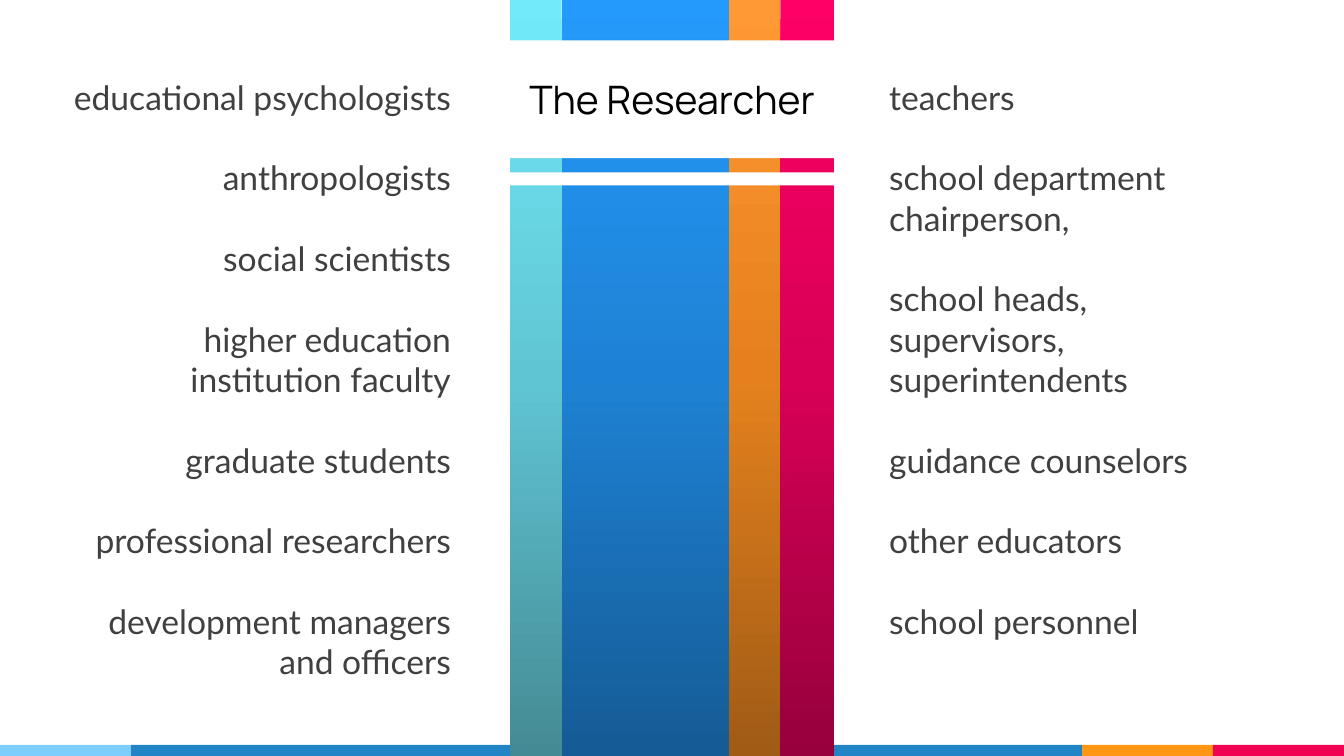
import copy
import pptx
import pptx.util
import pptx.dml.color
import pptx.enum.shapes
import pptx.enum.text
import pptx.oxml.ns

Inches = pptx.util.Inches
Pt = pptx.util.Pt
RGBColor = pptx.dml.color.RGBColor
PP_ALIGN = pptx.enum.text.PP_ALIGN

WHITE = RGBColor(0xFF, 0xFF, 0xFF)
BLACK = RGBColor(0x00, 0x00, 0x00)
GRAY = RGBColor(0x40, 0x40, 0x40)
SKY = RGBColor(0x7E, 0xCE, 0xFD)
BLUE = RGBColor(0x21, 0x85, 0xC5)
ORANGE = RGBColor(0xFF, 0x97, 0x15)
RED = RGBColor(0xF2, 0x02, 0x53)
BLUE_STOPS = (RGBColor(0x24, 0x9A, 0xFC), RGBColor(0x1E, 0x82, 0xD4), RGBColor(0x15, 0x5B, 0x95))
ORANGE_STOPS = (RGBColor(0xFF, 0x99, 0x33), RGBColor(0xE4, 0x81, 0x1E), RGBColor(0xA0, 0x5B, 0x15))
PINK_STOPS = (RGBColor(0xFF, 0x00, 0x66), RGBColor(0xD7, 0x00, 0x56), RGBColor(0x97, 0x00, 0x3C))
AQUA_STOPS = (RGBColor(0x72, 0xEA, 0xFA), RGBColor(0x60, 0xC5, 0xD3), RGBColor(0x44, 0x8A, 0x94))

prs = pptx.Presentation()
prs.slide_width = Inches(13.33)
prs.slide_height = Inches(7.5)
s = prs.slides.add_slide(prs.slide_layouts[6])


def add_rect(left, top, width, height, color=WHITE):
    sp = s.shapes.add_shape(
        pptx.enum.shapes.MSO_SHAPE.RECTANGLE,
        Inches(left), Inches(top), Inches(width), Inches(height))
    sp.shadow.inherit = False
    sp.fill.solid()
    sp.fill.fore_color.rgb = color
    sp.line.fill.background()
    return sp


footer = [(10.73, 1.3, ORANGE), (12.03, 1.3, RED), (0, 1.3, SKY), (1.3, 9.43, BLUE)]
for left, width, color in footer:
    add_rect(left, 7.39, width, 0.11, color)

left_column = [
    "educational psychologists",
    "anthropologists",
    "social scientists",
    "higher education institution faculty",
    "graduate students",
    "professional researchers",
    "development managers and officers",
]
right_column = [
    "teachers",
    "school department chairperson,",
    "school heads, supervisors, superintendents",
    "guidance counselors",
    "other educators",
    "school personnel",
]
columns = [(0.59, PP_ALIGN.RIGHT, left_column), (8.72, PP_ALIGN.LEFT, right_column)]
for left, align, people in columns:
    tf = s.shapes.add_textbox(Inches(left), Inches(0.66), Inches(3.98), Inches(6.3)).text_frame
    tf.word_wrap = True
    tf.margin_left = tf.margin_right = tf.margin_top = tf.margin_bottom = Inches(0.1)
    tf.text = "\n".join(people)
    for p in tf.paragraphs:
        p.alignment = align
        p.space_after = Pt(28.8)
        p.font.size = Pt(24)
        for r in p.runs:
            r.font.size = Pt(24)
            r.font.name = "Lato"
            r.font.color.rgb = GRAY

stripes = [
    (5.57, 1.67, BLUE_STOPS),
    (7.23, 0.51, ORANGE_STOPS),
    (7.74, 0.53, PINK_STOPS),
    (5.06, 0.51, AQUA_STOPS),
]
for left, width, colors in stripes:
    sp = add_rect(left, 0, width, 7.5)
    sp.fill.gradient()
    sp.fill.gradient_angle = 270
    stops = sp._element.spPr.find(".//" + pptx.oxml.ns.qn("a:gsLst"))
    stops.append(copy.deepcopy(stops[0]))
    for stop, position, color in zip(sp.fill.gradient_stops, (0, 0.5, 1), colors):
        stop.position = position
        stop.color.rgb = color

title = add_rect(5.06, 0.4, 3.21, 1.17)
tf = title.text_frame
tf.word_wrap = True
tf.vertical_anchor = pptx.enum.text.MSO_ANCHOR.MIDDLE
tf.text = "The Researcher"
p = tf.paragraphs[0]
p.alignment = PP_ALIGN.CENTER
r = p.runs[0]
r.font.size = Pt(28)
r.font.name = "Manrope"
r.font.color.rgb = BLACK

add_rect(5.06, 1.71, 3.21, 0.13)

prs.save("out.pptx")
